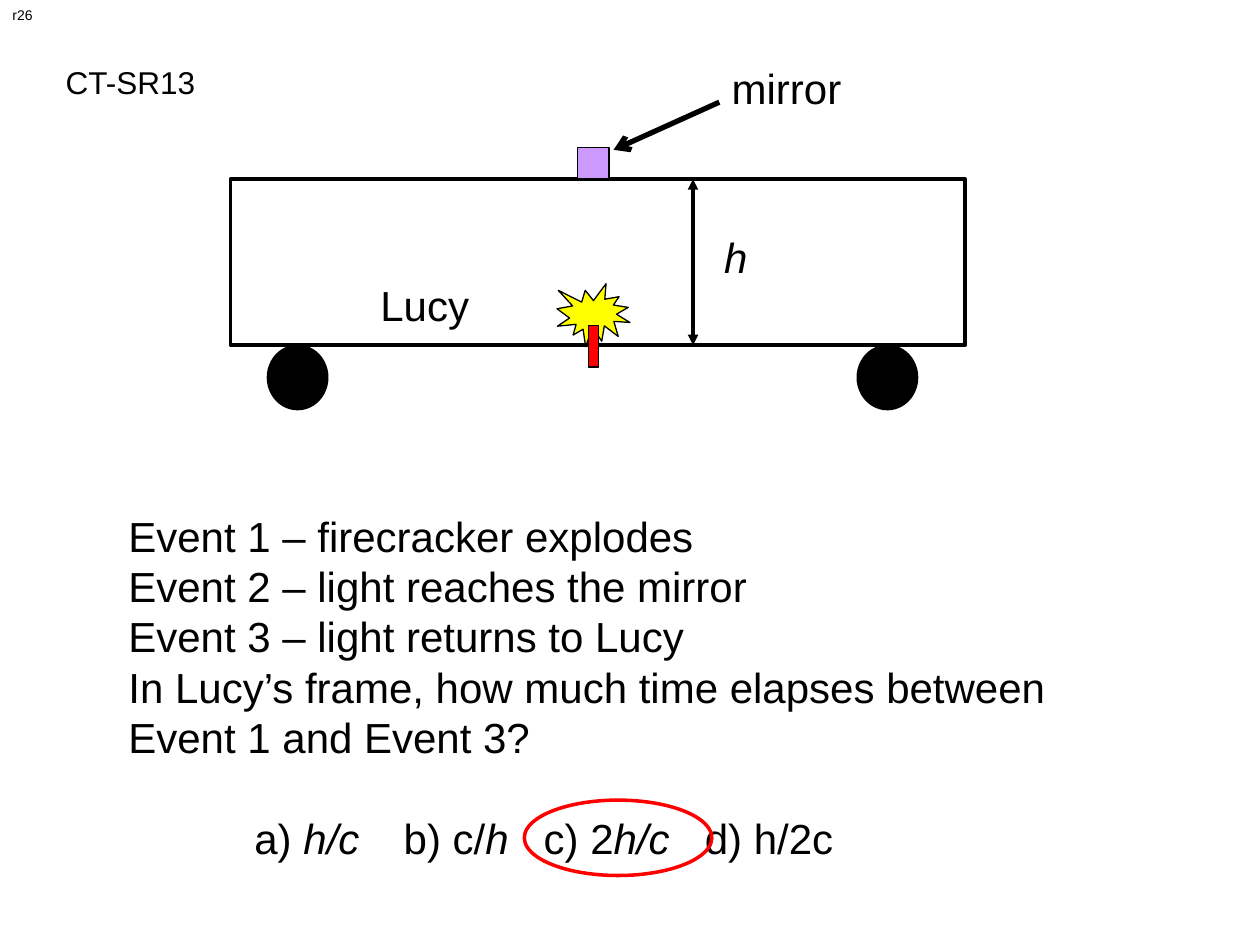
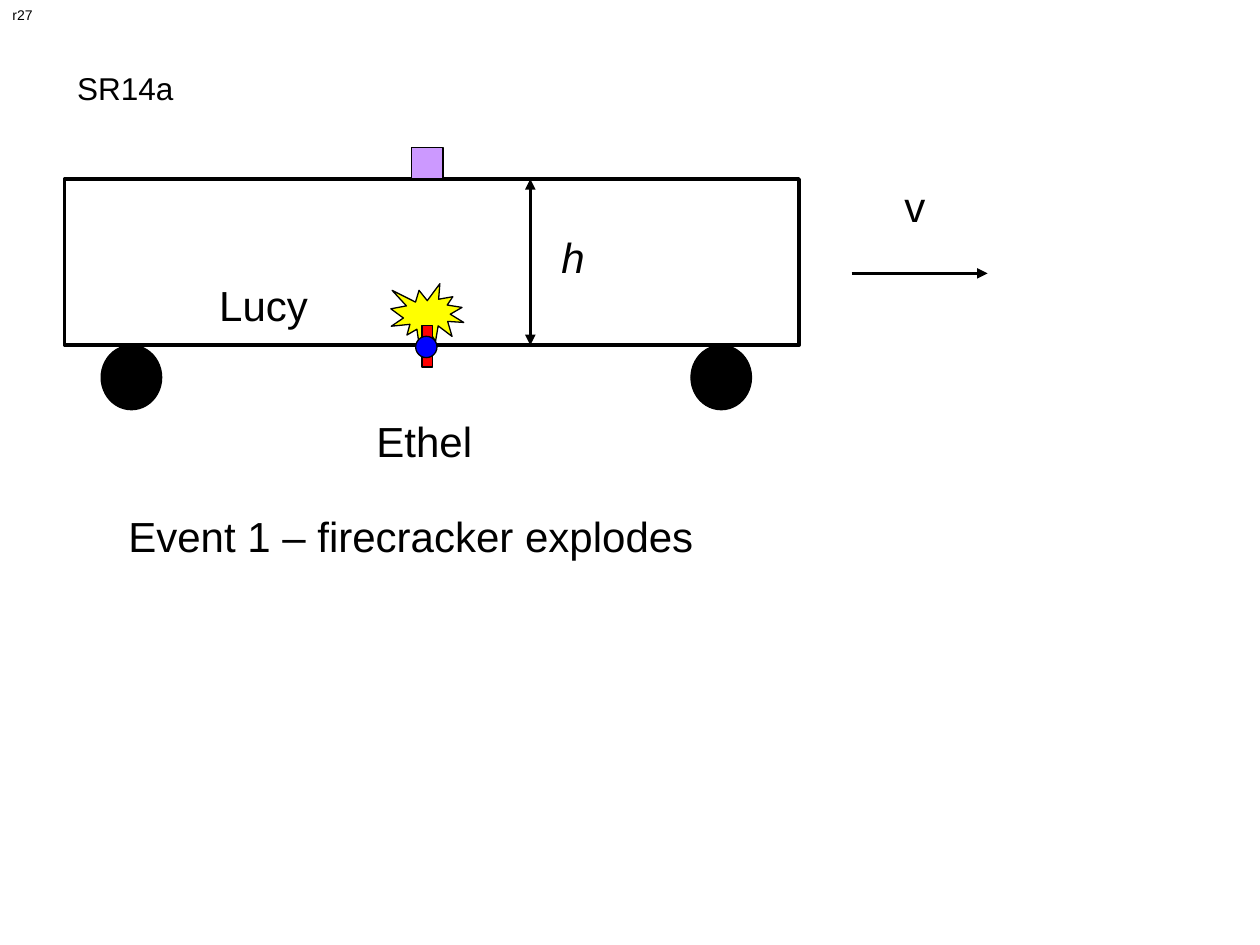
from dataclasses import dataclass

import pptx
import pptx.dml.color
import pptx.enum.shapes
import pptx.enum.text
import pptx.oxml.ns
import pptx.util
from lxml import etree

Cm = pptx.util.Cm
Pt = pptx.util.Pt
Shape = pptx.enum.shapes.MSO_SHAPE


@dataclass(frozen=True)
class Theme:
    font: str = "Arial"
    ink: str = "000000"
    spark: str = "FFFF00"
    firecracker: str = "FF0000"
    mirror: str = "CC99FF"
    observer: str = "0000FF"
    answer: str = "FF0000"
    page_size: float = 8
    title_size: float = 18
    body_size: float = 24
    thin: float = 0.75
    medium: float = 2
    thick: float = 3


THEME = Theme()

# Car measures in centimetres, shared by both slides
CAR_TOP, CAR_WIDTH, CAR_HEIGHT = 3.61, 14.81, 3.35
CAR_BOTTOM = CAR_TOP + CAR_HEIGHT
CAR_AXIS = 7.31  # from the left end of the car to mirror and firecracker
WHEEL_OFFSETS = (0.74, 12.63)
MIRROR_SIDE = 0.64
LABEL_HEIGHT = 1.27


def color(code):
    return pptx.dml.color.RGBColor.from_string(code)


# Text
def add_run(paragraph, text, size, italic=False):
    run = paragraph.add_run()
    run.text = text
    run.font.name = THEME.font
    run.font.size = Pt(size)
    run.font.italic = italic
    run.font.color.rgb = color(THEME.ink)


def add_text(slide, left, top, width, height, lines, size=THEME.body_size, wrap=False):
    """Each line is a list of (text, italic) runs."""
    box = slide.shapes.add_textbox(Cm(left), Cm(top), Cm(width), Cm(height))
    frame = box.text_frame
    frame.word_wrap = wrap
    for index, runs in enumerate(lines):
        paragraph = frame.add_paragraph() if index else frame.paragraphs[0]
        for text, italic in runs:
            add_run(paragraph, text, size, italic)
    return frame


def add_label(slide, text, left, top, width, italic=False):
    add_text(slide, left, top, width, LABEL_HEIGHT, [[(text, italic)]])


def add_tab_stops(paragraph, positions):
    properties = paragraph._p.get_or_add_pPr()
    stops = etree.SubElement(properties, pptx.oxml.ns.qn("a:tabLst"))
    for position in positions:
        etree.SubElement(stops, pptx.oxml.ns.qn("a:tab"), pos=str(Cm(position)), algn="l")


# Shapes and lines
def add_figure(slide, kind, left, top, width, height, fill=None,
               line=THEME.ink, weight=THEME.thin):
    shape = slide.shapes.add_shape(kind, Cm(left), Cm(top), Cm(width), Cm(height))
    shape.shadow.inherit = False
    if fill:
        shape.fill.solid()
        shape.fill.fore_color.rgb = color(fill)
    else:
        shape.fill.background()
    shape.line.color.rgb = color(line)
    shape.line.width = Pt(weight)


def add_arrow(slide, start, end, weight=THEME.medium, head=None, tail="triangle"):
    connector = slide.shapes.add_connector(
        pptx.enum.shapes.MSO_CONNECTOR.STRAIGHT, *map(Cm, start + end))
    connector.line.color.rgb = color(THEME.ink)
    connector.line.width = Pt(weight)
    line = connector.line._get_or_add_ln()
    for tag, style in (("a:headEnd", head), ("a:tailEnd", tail)):
        if style:
            etree.SubElement(line, pptx.oxml.ns.qn(tag), type=style)
    etree.SubElement(connector._element.spPr, pptx.oxml.ns.qn("a:effectLst"))


# Parts of the thought experiment
def add_car(slide, left):
    for offset in WHEEL_OFFSETS:
        add_figure(slide, Shape.OVAL, left + offset, CAR_BOTTOM, 1.22, 1.3, THEME.ink)
    add_figure(slide, Shape.RECTANGLE, left, CAR_TOP, CAR_WIDTH, CAR_HEIGHT,
               weight=THEME.medium)
    add_figure(slide, Shape.RECTANGLE, left + CAR_AXIS - MIRROR_SIDE / 2,
               CAR_TOP - MIRROR_SIDE, MIRROR_SIDE, MIRROR_SIDE, THEME.mirror)


def add_firecracker(slide, car_left):
    axis = car_left + CAR_AXIS
    add_figure(slide, Shape.EXPLOSION1, axis - 0.73, 5.72, 1.47, 1.27, THEME.spark)
    add_figure(slide, Shape.RECTANGLE, axis - 0.1, 6.56, 0.21, 0.84, THEME.firecracker)


def add_car_labels(slide, lucy_left, height_x):
    add_label(slide, "Lucy", lucy_left, 5.51, 2.31)
    add_arrow(slide, (height_x, CAR_BOTTOM), (height_x, CAR_TOP), head="triangle")
    add_label(slide, "h", height_x + 0.38, 4.55, 0.99, italic=True)


def add_titled_slide(presentation, page, title, left, top, width):
    slide = presentation.slides.add_slide(presentation.slide_layouts[5])
    placeholder = slide.shapes.title
    placeholder.left, placeholder.top = Cm(left), Cm(top)
    placeholder.width, placeholder.height = Cm(width), Cm(1.02)
    frame = placeholder.text_frame
    frame.word_wrap = False
    frame.auto_size = pptx.enum.text.MSO_AUTO_SIZE.NONE
    frame.vertical_anchor = pptx.enum.text.MSO_ANCHOR.TOP
    frame.paragraphs[0].alignment = pptx.enum.text.PP_ALIGN.LEFT
    add_run(frame.paragraphs[0], title, THEME.title_size)
    add_text(slide, 0, 0, 0.91, 0.61, [[(page, False)]], THEME.page_size)
    return slide


def add_events(slide, lines, height):
    return add_text(slide, 2.34, 10.16, 21.21, height, lines, wrap=True)


# Slides
FIRST_EVENT = [("Event 1 – firecracker explodes", False)]


def build_question(presentation):
    slide = add_titled_slide(presentation, "r26", "CT-SR13", 1.07, 1.14, 3.15)
    car_left = 4.65
    add_car(slide, car_left)
    add_firecracker(slide, car_left)
    add_car_labels(slide, 7.42, 13.97)
    add_label(slide, "mirror", 14.5, 1.14, 2.72)
    add_arrow(slide, (14.5, 2.06), (12.37, 3.02), THEME.thick, tail="arrow")

    choices = [("\ta) ", False), ("h/c", True), ("\tb) c/", False), ("h", True),
               ("\tc) 2", False), ("h/c", True), ("\td) h/2c", False)]
    frame = add_events(slide, [
        FIRST_EVENT,
        [("Event 2 – light reaches the mirror", False)],
        [("Event 3 – light returns to Lucy", False)],
        [("In Lucy’s frame, how much time elapses between Event 1 and Event 3?", False)],
        choices,
    ], 7.37)
    answers = frame.paragraphs[-1]
    answers.space_before = Pt(28.8)
    add_tab_stops(answers, (2.54, 5.55, 8.37, 11.62))
    add_figure(slide, Shape.OVAL, 10.57, 16.13, 3.78, 1.52,
               line=THEME.answer, weight=THEME.medium)


def build_moving_car(presentation):
    slide = add_titled_slide(presentation, "r27", "SR14a", 1.3, 1.27, 2.46)
    car_left = 1.3
    add_firecracker(slide, car_left)
    add_car(slide, car_left)
    add_car_labels(slide, 4.17, 10.69)
    add_arrow(slide, (17.17, 5.51), (19.91, 5.51))
    add_label(slide, "v", 17.98, 3.51, 0.94)
    add_label(slide, "Ethel", 7.34, 8.26, 2.44)
    add_figure(slide, Shape.OVAL, car_left + CAR_AXIS - 0.23, 6.78, 0.43, 0.43,
               THEME.observer)
    add_events(slide, [FIRST_EVENT], LABEL_HEIGHT)


def main():
    presentation = pptx.Presentation()
    presentation.slide_width, presentation.slide_height = Cm(25.4), Cm(19.05)
    build_question(presentation)
    build_moving_car(presentation)
    presentation.save("out.pptx")


if __name__ == "__main__":
    main()
